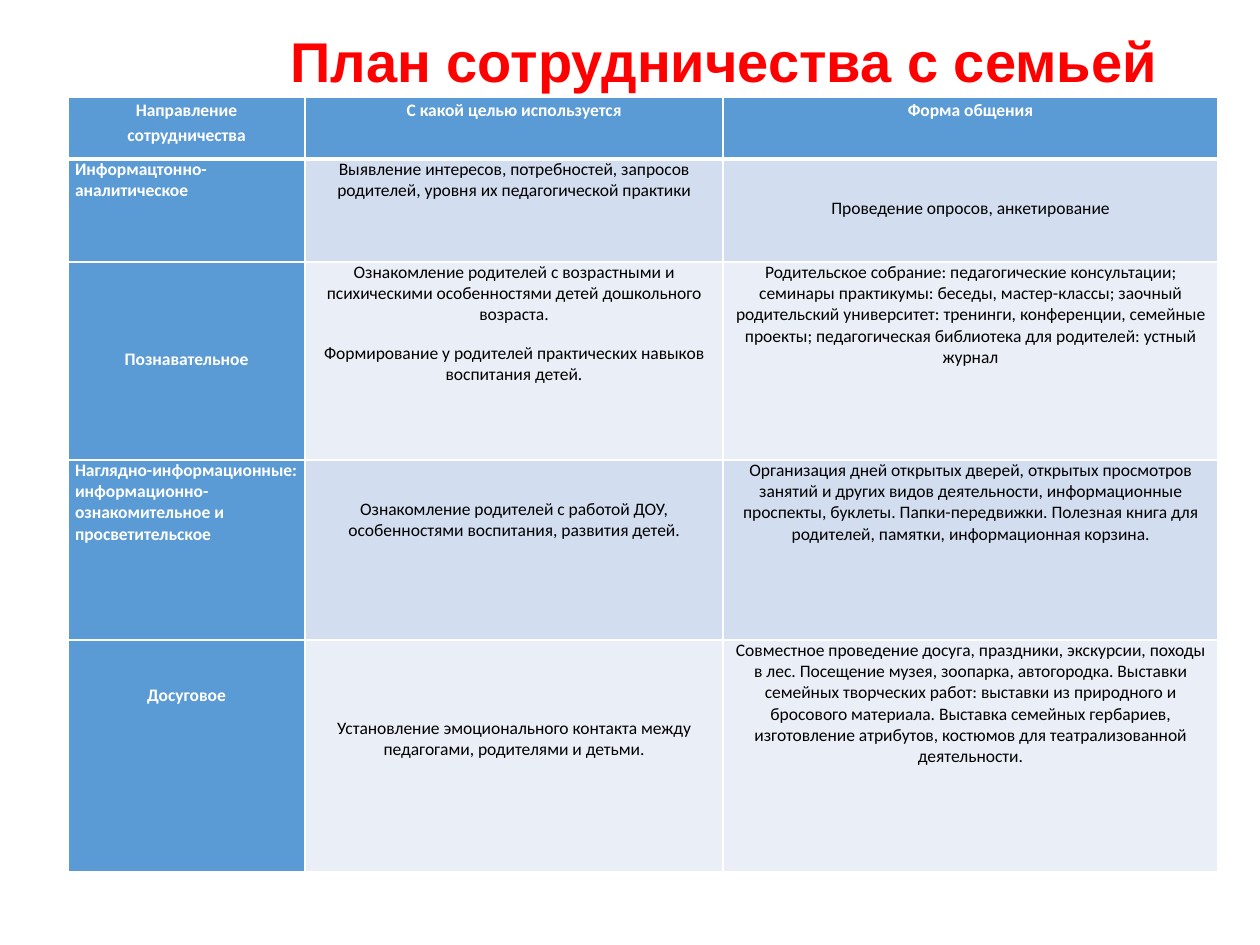
from lxml import etree
from pptx import Presentation
from pptx.dml.color import RGBColor
from pptx.enum.text import MSO_ANCHOR, PP_ALIGN
from pptx.oxml.ns import qn
from pptx.util import Emu, Pt

PX = 914400 / 126
COLORS = {"title": "FF0000", "head": "5B9BD5", "odd": "D2DEEF",
          "even": "EAEFF7", "white": "FFFFFF", "text": "000000"}
COL_WIDTHS = [237, 418, 495]
ROW_HEIGHTS = [62, 103, 198, 180, 232]
LEFT, CENTER = PP_ALIGN.LEFT, PP_ALIGN.CENTER

HEADERS = ["Направление сотрудничества", "С какой целью используется",
           "Форма общения"]
# Row heading, its alignment, then (top inset, paragraphs) for each cell
ROWS = [
    ("Информацтонно-аналитическое", LEFT, [
        (0, []),
        (0, ["Выявление интересов, потребностей, запросов родителей, "
             "уровня их педагогической практики"]),
        (39, ["Проведение опросов, анкетирование"])]),
    ("Познавательное", CENTER, [
        (84, []),
        (0, ["Ознакомление родителей с возрастными и психическими "
             "особенностями детей дошкольного возраста.",
             "Формирование у родителей практических навыков воспитания детей."]),
        (0, ["Родительское собрание: педагогические консультации; семинары "
             "практикумы: беседы, мастер-классы; заочный родительский "
             "университет: тренинги, конференции, семейные проекты; "
             "педагогическая библиотека для родителей: устный журнал"])]),
    ("Наглядно-информационные: информационно-ознакомительное и "
     "просветительское", LEFT, [
        (0, []),
        (39, ["Ознакомление родителей с работой ДОУ, особенностями "
              "воспитания, развития детей."]),
        (0, ["Организация дней открытых дверей, открытых просмотров занятий "
             "и других видов деятельности, информационные проспекты, буклеты. "
             "Папки-передвижки. Полезная книга для родителей, памятки, "
             "информационная корзина."])]),
    ("Досуговое", CENTER, [
        (42, []),
        (78, ["Установление эмоционального контакта между педагогами, "
              "родителями и детьми."]),
        (0, ["Совместное проведение досуга, праздники, экскурсии, походы в "
             "лес. Посещение музея, зоопарка, автогородка. Выставки семейных "
             "творческих работ: выставки из природного и бросового материала. "
             "Выставка семейных гербариев, изготовление атрибутов, костюмов "
             "для театрализованной деятельности."])]),
]


def px(n):
    return Emu(round(n * PX))


def rgb(name):
    return RGBColor.from_string(COLORS[name])


def set_borders(cell, top=1, bottom=1):
    tc_pr = cell._tc.get_or_add_tcPr()
    sides = [("L", 1), ("R", 1), ("T", top), ("B", bottom)]
    for i, (side, width) in enumerate(sides):
        ln = etree.Element(qn(f"a:ln{side}"), w=str(Pt(width)))
        fill = etree.SubElement(ln, qn("a:solidFill"))
        etree.SubElement(fill, qn("a:srgbClr"), val=COLORS["white"])
        tc_pr.insert(i, ln)


def fill_cell(cell, paragraphs, fill, inset=0, align=CENTER, spacing=1.0):
    is_head = fill == "head"
    cell.fill.solid()
    cell.fill.fore_color.rgb = rgb(fill)
    cell.margin_left = cell.margin_right = px(7)
    cell.margin_top, cell.margin_bottom = px(inset), 0
    tf = cell.text_frame
    tf.text = "\n".join(paragraphs)
    for p in tf.paragraphs:
        p.alignment = align
        p.line_spacing = spacing
        p.space_after = Pt(10)
        p.font.name, p.font.size = "Calibri", Pt(10)
        p.font.bold = is_head
        p.font.color.rgb = rgb("white" if is_head else "text")


def add_title(slide, text):
    sp = slide.shapes.title
    sp.left, sp.top, sp.width, sp.height = px(278), px(10), px(982), px(158)
    tf = sp.text_frame
    tf.text = text
    tf.vertical_anchor = MSO_ANCHOR.TOP
    tf.margin_top = px(16)
    p = tf.paragraphs[0]
    p.alignment = LEFT
    p.font.name, p.font.size, p.font.bold = "Arial", Pt(32), True
    p.font.color.rgb = rgb("title")


def add_plan_table(slide):
    table = slide.shapes.add_table(
        len(ROW_HEIGHTS), len(COL_WIDTHS), px(68), px(97),
        px(sum(COL_WIDTHS)), px(sum(ROW_HEIGHTS))).table
    for col, width in zip(table.columns, COL_WIDTHS):
        col.width = px(width)
    for row, height in zip(table.rows, ROW_HEIGHTS):
        row.height = px(height)

    # Header row
    for c, text in enumerate(HEADERS):
        cell = table.cell(0, c)
        fill_cell(cell, [text], "head", spacing=1.15)
        set_borders(cell, bottom=3)

    # Body rows, banded, with a coloured first column
    for r, (heading, align, cells) in enumerate(ROWS, start=1):
        for c, (inset, paragraphs) in enumerate(cells):
            cell = table.cell(r, c)
            if c == 0:
                spacing = 1.15 if align == CENTER else 1.0
                fill_cell(cell, [heading], "head", inset, align, spacing)
            else:
                fill_cell(cell, paragraphs, "odd" if r % 2 else "even", inset)
            set_borders(cell, top=3 if r == 1 else 1)


def main():
    prs = Presentation()
    prs.slide_width, prs.slide_height = px(1260), px(945)
    slide = prs.slides.add_slide(prs.slide_layouts[5])
    add_title(slide, "План сотрудничества с семьей")
    add_plan_table(slide)
    prs.save("out.pptx")


if __name__ == "__main__":
    main()
